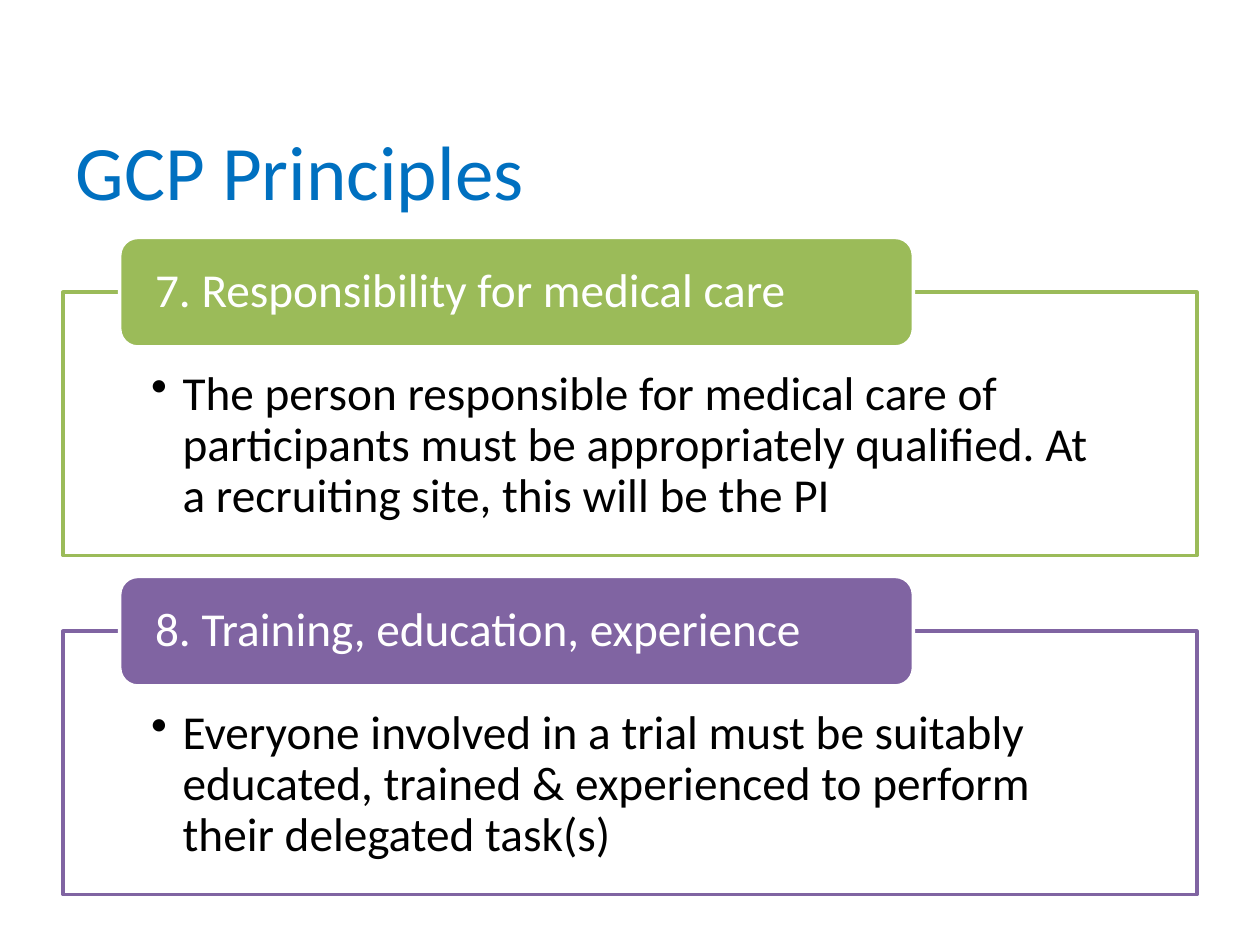
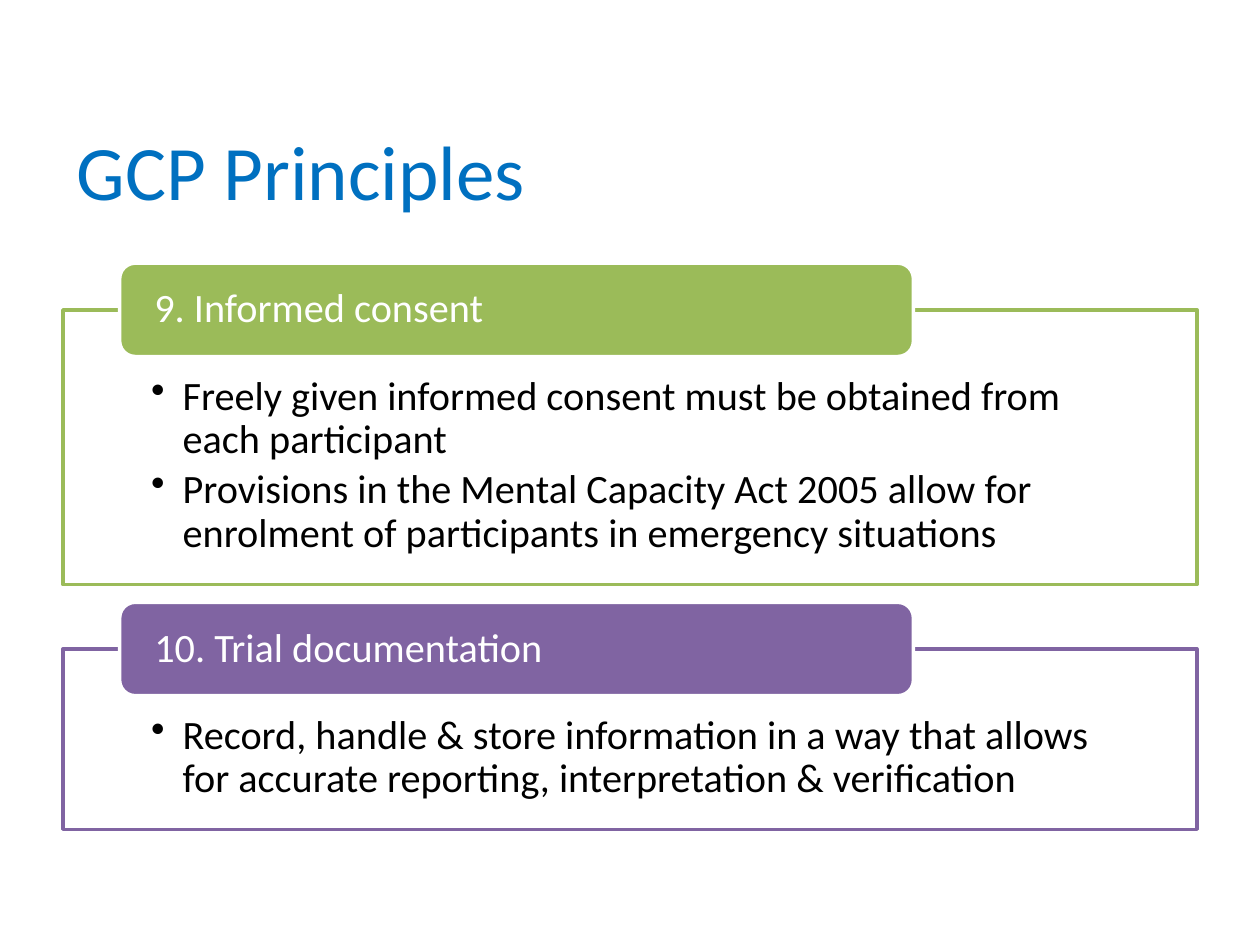
"""Build two slides of GCP principles as tabbed, outlined panels."""
from dataclasses import dataclass

from lxml import etree
from pptx import Presentation
from pptx.dml.color import RGBColor
from pptx.enum.shapes import MSO_SHAPE
from pptx.enum.text import MSO_ANCHOR, PP_ALIGN
from pptx.oxml.ns import qn
from pptx.presentation import Presentation as Deck
from pptx.shapes.autoshape import Shape
from pptx.slide import Slide
from pptx.text.text import TextFrame
from pptx.util import Pt

RECTANGLE = MSO_SHAPE.RECTANGLE
ROUNDED = MSO_SHAPE.ROUNDED_RECTANGLE
TOP = MSO_ANCHOR.TOP
MIDDLE = MSO_ANCHOR.MIDDLE
LEFT = PP_ALIGN.LEFT
TITLE_ONLY = 5


@dataclass(frozen=True)
class Theme:
    """Colours, type and line settings shared by the slides."""

    font: str = "Calibri"
    title_size: float = 44
    title: RGBColor = RGBColor(0x00, 0x70, 0xC0)
    text: RGBColor = RGBColor(0x00, 0x00, 0x00)
    white: RGBColor = RGBColor(0xFF, 0xFF, 0xFF)
    accents: tuple[RGBColor, ...] = (
        RGBColor(0x9B, 0xBB, 0x59),
        RGBColor(0x80, 0x64, 0xA2),
    )
    line_width: float = 2
    line_spacing: float = 0.9
    frame_opacity: int = 90


@dataclass(frozen=True)
class Principle:
    """A numbered principle with its bullets and frame height in points."""

    heading: str
    bullets: tuple[str, ...]
    height: float


@dataclass(frozen=True)
class PrincipleSlide:
    """A slide whose panel proportions follow its text size."""

    title_left: float
    first_top: float
    size: float
    principles: tuple[Principle, ...]


THEME = Theme()
FRAME_LEFT, FRAME_WIDTH, FRAME_INSET = 36, 648, 50.4
TAB_LEFT, TAB_WIDTH, TAB_INSET = 68.4, 453.6, 17.2
TAB_RATIO, GAP_RATIO = 2.32, 1.6
INSET_TOP_RATIO, INSET_BOTTOM_RATIO, AFTER_RATIO = 1.63, 0.56, 0.16
BULLET_INDENT = 18

SLIDES = (
    PrincipleSlide(36, 167, 27, (
        Principle(
            "7. Responsibility for medical care",
            ("The person responsible for medical care of participants must be "
             "appropriately qualified. At a recruiting site, this will be the PI",),
            150.5,
        ),
        Principle(
            "8. Training, education, experience",
            ("Everyone involved in a trial must be suitably educated, trained & "
             "experienced to perform their delegated task(s)",),
            150.5,
        ),
    )),
    PrincipleSlide(36.7, 177.1, 23, (
        Principle(
            "9. Informed consent",
            ("Freely given informed consent must be obtained from each participant",
             "Provisions in the Mental Capacity Act 2005 allow for enrolment of "
             "participants in emergency situations"),
            157,
        ),
        Principle(
            "10. Trial documentation",
            ("Record, handle & store information in a way that allows for accurate "
             "reporting, interpretation & verification",),
            103,
        ),
    )),
)


def add_box(slide: Slide, kind: MSO_SHAPE, left: float, top: float, width: float,
            height: float, fill: RGBColor, line: RGBColor) -> Shape:
    """Add a filled and outlined shape without a shadow."""
    shape = slide.shapes.add_shape(kind, Pt(left), Pt(top), Pt(width), Pt(height))
    shape.shadow.inherit = False
    shape.fill.solid()
    shape.fill.fore_color.rgb = fill
    shape.line.color.rgb = line
    shape.line.width = Pt(THEME.line_width)
    return shape


def set_opacity(shape: Shape, percent: int) -> None:
    """Make the solid fill of a shape partly transparent."""
    colour = shape.fill._xPr.find(qn("a:solidFill"))[0]
    etree.SubElement(colour, qn("a:alpha")).set("val", str(percent * 1000))


def set_frame(frame: TextFrame, anchor: MSO_ANCHOR, side: float,
              top: float = 0, bottom: float = 0) -> None:
    """Set wrapping, anchor and insets of a text frame."""
    frame.word_wrap = True
    frame.vertical_anchor = anchor
    frame.margin_left = frame.margin_right = Pt(side)
    frame.margin_top, frame.margin_bottom = Pt(top), Pt(bottom)


def format_text(frame: TextFrame, size: float, colour: RGBColor) -> None:
    """Left-align every paragraph and format its runs."""
    for paragraph in frame.paragraphs:
        paragraph.alignment = LEFT
        for run in paragraph.runs:
            run.font.name = THEME.font
            run.font.size = Pt(size)
            run.font.color.rgb = colour


def add_bullets(frame: TextFrame, size: float) -> None:
    """Give every paragraph a hanging bullet and its spacing."""
    for paragraph in frame.paragraphs:
        paragraph.line_spacing = THEME.line_spacing
        paragraph.space_after = Pt(size * AFTER_RATIO)
        properties = paragraph._p.get_or_add_pPr()
        properties.set("marL", str(Pt(BULLET_INDENT)))
        properties.set("indent", str(-Pt(BULLET_INDENT)))
        etree.SubElement(properties, qn("a:buChar")).set("char", "•")


def add_panel(slide: Slide, principle: Principle, top: float, size: float,
              accent: RGBColor) -> None:
    """Add a bulleted frame with a heading tab centred on its top edge."""
    frame = add_box(slide, RECTANGLE, FRAME_LEFT, top, FRAME_WIDTH,
                    principle.height, THEME.white, accent)
    set_opacity(frame, THEME.frame_opacity)
    set_frame(frame.text_frame, TOP, FRAME_INSET,
              size * INSET_TOP_RATIO, size * INSET_BOTTOM_RATIO)
    frame.text_frame.text = "\n".join(principle.bullets)
    add_bullets(frame.text_frame, size)
    format_text(frame.text_frame, size, THEME.text)

    tab_height = size * TAB_RATIO
    tab = add_box(slide, ROUNDED, TAB_LEFT, top - tab_height / 2, TAB_WIDTH,
                  tab_height, accent, THEME.white)
    set_frame(tab.text_frame, MIDDLE, TAB_INSET)
    tab.text_frame.text = principle.heading
    tab.text_frame.paragraphs[0].line_spacing = THEME.line_spacing
    format_text(tab.text_frame, size, THEME.white)


def add_title(slide: Slide, left: float) -> None:
    """Place and format the slide title."""
    title = slide.shapes.title
    title.left, title.top, title.width, title.height = Pt(left), Pt(67), Pt(648), Pt(90)
    title.text_frame.text = "GCP Principles"
    title.text_frame.vertical_anchor = TOP
    format_text(title.text_frame, THEME.title_size, THEME.title)


def build_slide(presentation: Deck, content: PrincipleSlide) -> None:
    """Add a slide and stack its panels at equal gaps."""
    slide = presentation.slides.add_slide(presentation.slide_layouts[TITLE_ONLY])
    add_title(slide, content.title_left)
    top = content.first_top
    for principle, accent in zip(content.principles, THEME.accents):
        add_panel(slide, principle, top, content.size, accent)
        top += principle.height + content.size * GAP_RATIO


def main() -> None:
    """Build and save the presentation."""
    presentation = Presentation()
    presentation.slide_width, presentation.slide_height = Pt(720), Pt(540)
    for content in SLIDES:
        build_slide(presentation, content)
    presentation.save("out.pptx")


if __name__ == "__main__":
    main()
